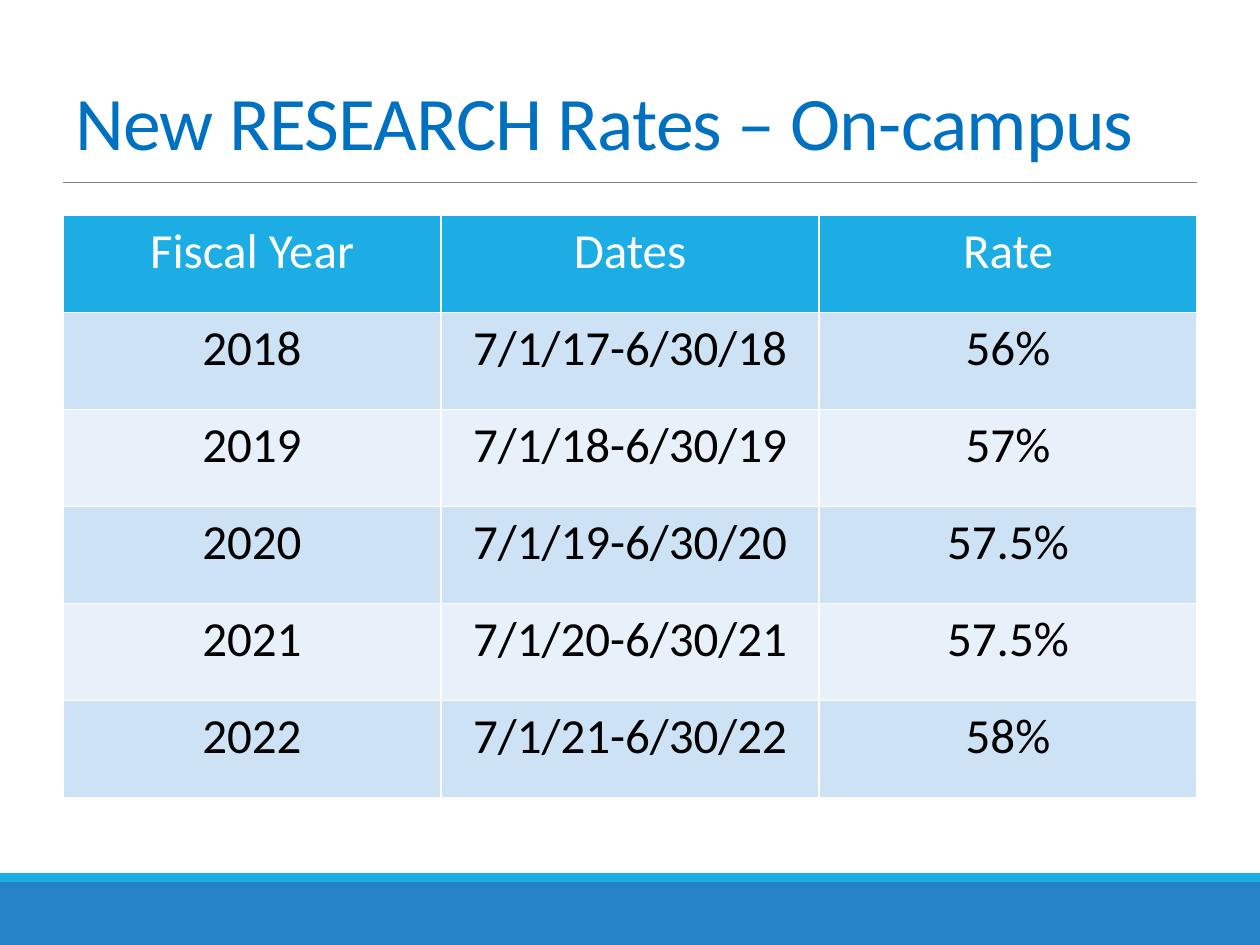
from pptx import Presentation
from pptx.dml.color import RGBColor
from pptx.enum.shapes import MSO_CONNECTOR, MSO_SHAPE
from pptx.enum.text import MSO_ANCHOR, MSO_AUTO_SIZE, PP_ALIGN
from pptx.oxml.ns import qn
from pptx.util import Inches, Pt
from lxml import etree

RECT = MSO_SHAPE.RECTANGLE
STRAIGHT = MSO_CONNECTOR.STRAIGHT
CENTER, LEFT = PP_ALIGN.CENTER, PP_ALIGN.LEFT

# Content
TITLE = "New RESEARCH Rates – On-campus"
RATES = [
    ("Fiscal Year", "Dates", "Rate"),
    ("2018", "7/1/17-6/30/18", "56%"),
    ("2019", "7/1/18-6/30/19", "57%"),
    ("2020", "7/1/19-6/30/20", "57.5%"),
    ("2021", "7/1/20-6/30/21", "57.5%"),
    ("2022", "7/1/21-6/30/22", "58%"),
]
FONT = "Calibri"
COLORS = {
    "title": "0070C0", "rule": "808080", "footer": "2683C6", "accent": "1CADE4",
    "band_dark": "CDE3F5", "band_light": "E8F1FA",
    "header_text": "FFFFFF", "body_text": "000000",
}
FOOTER_BARS = [("footer", 7, 0.5), ("accent", 6.93, 0.07)]  # colour, top, height
MARGIN, WIDTH = 0.5, 9
ROW_HEIGHT = 0.77


def rgb(name):
    return RGBColor.from_string(COLORS[name])


def add_text(p, text, size, color, align):
    p.alignment = align
    r = p.add_run()
    r.text = text
    r.font.name = FONT
    r.font.size = Pt(size)
    r.font.bold = False
    r.font.color.rgb = rgb(color)
    return r


prs = Presentation()
prs.slide_width, prs.slide_height = Inches(10), Inches(7.5)
s = prs.slides.add_slide(prs.slide_layouts[5])

# Footer bars
for color, top, height in FOOTER_BARS:
    bar = s.shapes.add_shape(RECT, 0, Inches(top), prs.slide_width, Inches(height))
    bar.shadow.inherit = False
    bar.fill.solid()
    bar.fill.fore_color.rgb = rgb(color)
    bar.line.fill.background()

# Rule under the title
rule = s.shapes.add_connector(STRAIGHT, Inches(MARGIN), Inches(1.45),
                              Inches(MARGIN + WIDTH), Inches(1.45))
rule.line.color.rgb = rgb("rule")
rule.line.width = Pt(0.5)
etree.SubElement(rule._element.spPr, qn("a:effectLst"))

# Title
title = s.shapes.title
title.left, title.top = Inches(MARGIN), Inches(0.32)
title.width, title.height = Inches(WIDTH), Inches(1.05)
tf = title.text_frame
tf.word_wrap = True
tf.auto_size = MSO_AUTO_SIZE.NONE
tf.vertical_anchor = MSO_ANCHOR.BOTTOM
p = tf.paragraphs[0]
p.line_spacing = 0.85
r = add_text(p, TITLE, 43.2, "title", LEFT)
r.font._element.set("spc", "-50")

# Rates table
table = s.shapes.add_table(len(RATES), len(RATES[0]), Inches(MARGIN), Inches(1.71),
                           Inches(WIDTH), Inches(ROW_HEIGHT * len(RATES))).table
for i, row in enumerate(RATES):
    if i == 0:
        fill, color = "accent", "header_text"
    else:
        fill, color = ("band_dark" if i % 2 else "band_light"), "body_text"
    for j, text in enumerate(row):
        cell = table.cell(i, j)
        cell.fill.solid()
        cell.fill.fore_color.rgb = rgb(fill)
        add_text(cell.text_frame.paragraphs[0], text, 28, color, CENTER)

prs.save("out.pptx")
